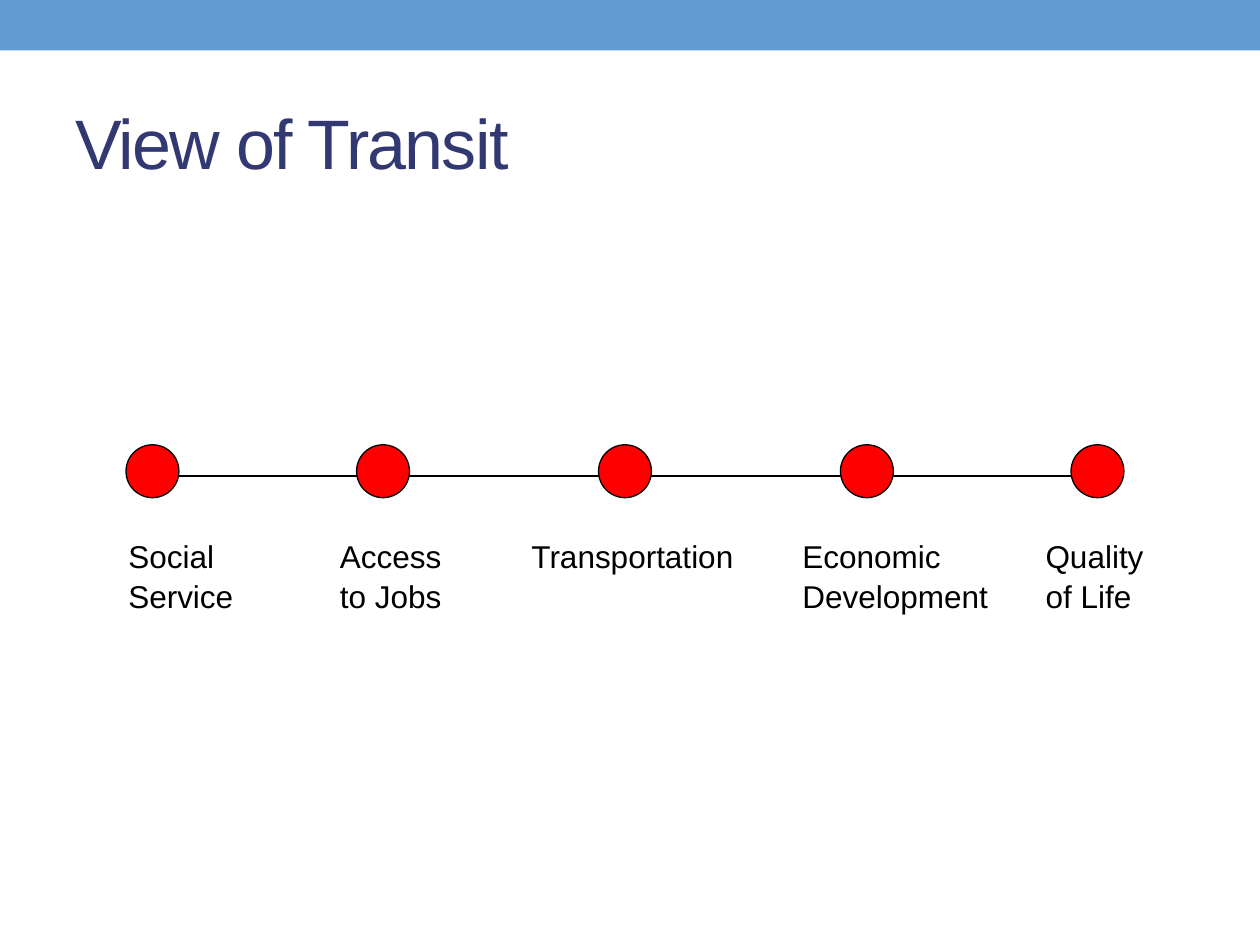
from lxml import etree
from pptx import Presentation
from pptx.dml.color import RGBColor
from pptx.enum.shapes import MSO_CONNECTOR, MSO_SHAPE
from pptx.enum.text import MSO_ANCHOR
from pptx.oxml.ns import qn
from pptx.util import Inches, Pt

TITLE = "View of Transit"
LABEL_LINES = [
    ("Social", "Access", "Transportation", "Economic", "Quality"),
    ("Service", "to Jobs", "", "Development", "of Life"),
]
LABEL_TABS = (1.68, 3.2, 5.35, 7.28)
STOP_LEFTS = (1, 2.83, 4.75, 6.67, 8.5)
STOP_TOP, STOP_SIZE = 3.53, 0.42
TRACK_LEFT, TRACK_RIGHT, TRACK_Y = 1.08, 8.83, 3.78

FONT = "Arial"
BLUE = RGBColor(0x62, 0x9D, 0xD1)
NAVY = RGBColor(0x32, 0x38, 0x72)
RED = RGBColor(0xFF, 0x00, 0x00)
BLACK = RGBColor(0x00, 0x00, 0x00)
RECTANGLE, OVAL = MSO_SHAPE.RECTANGLE, MSO_SHAPE.OVAL
STRAIGHT = MSO_CONNECTOR.STRAIGHT
MIDDLE = MSO_ANCHOR.MIDDLE


def add_filled(slide, kind, box, color):
    shape = slide.shapes.add_shape(kind, *map(Inches, box))
    shape.shadow.inherit = False
    shape.fill.solid()
    shape.fill.fore_color.rgb = color
    return shape


def add_text(slide, box, text, size, color):
    frame = slide.shapes.add_textbox(*map(Inches, box)).text_frame
    frame.word_wrap = True
    frame.text = text
    for paragraph in frame.paragraphs:
        for run in paragraph.runs:
            run.font.name = FONT
            run.font.size = Pt(size)
            run.font.color.rgb = color
    return frame


def set_tabs(paragraph, positions):
    tabs = etree.SubElement(paragraph._p.get_or_add_pPr(), qn("a:tabLst"))
    for position in positions:
        etree.SubElement(tabs, qn("a:tab"), pos=str(Inches(position)), algn="l")


def main():
    deck = Presentation()
    deck.slide_width, deck.slide_height = Inches(10), Inches(7.5)
    slide = deck.slides.add_slide(deck.slide_layouts[6])

    banner = add_filled(slide, RECTANGLE, (0, 0, 10, 0.4), BLUE)
    banner.line.fill.background()

    title = add_text(slide, (0.5, 0.58, 9, 1.08), TITLE, 40, NAVY)
    title.vertical_anchor = MIDDLE
    title.paragraphs[0].runs[0].font._element.set("spc", "-100")

    track = slide.shapes.add_connector(
        STRAIGHT, Inches(TRACK_LEFT), Inches(TRACK_Y), Inches(TRACK_RIGHT), Inches(TRACK_Y))
    track.line.color.rgb = BLACK
    track.line.width = Pt(1.25)
    etree.SubElement(track._element.spPr, qn("a:effectLst"))

    for left in STOP_LEFTS:
        stop = add_filled(slide, OVAL, (left, STOP_TOP, STOP_SIZE, STOP_SIZE), RED)
        stop.line.color.rgb = BLACK
        stop.line.width = Pt(0.75)

    label_text = "\n".join("\t".join(line) for line in LABEL_LINES)
    labels = add_text(slide, (0.92, 4.2, 8.33, 1.3), label_text, 18, BLACK)
    for paragraph in labels.paragraphs:
        paragraph.line_spacing = 1.05
        set_tabs(paragraph, LABEL_TABS)

    deck.save("out.pptx")


if __name__ == "__main__":
    main()
